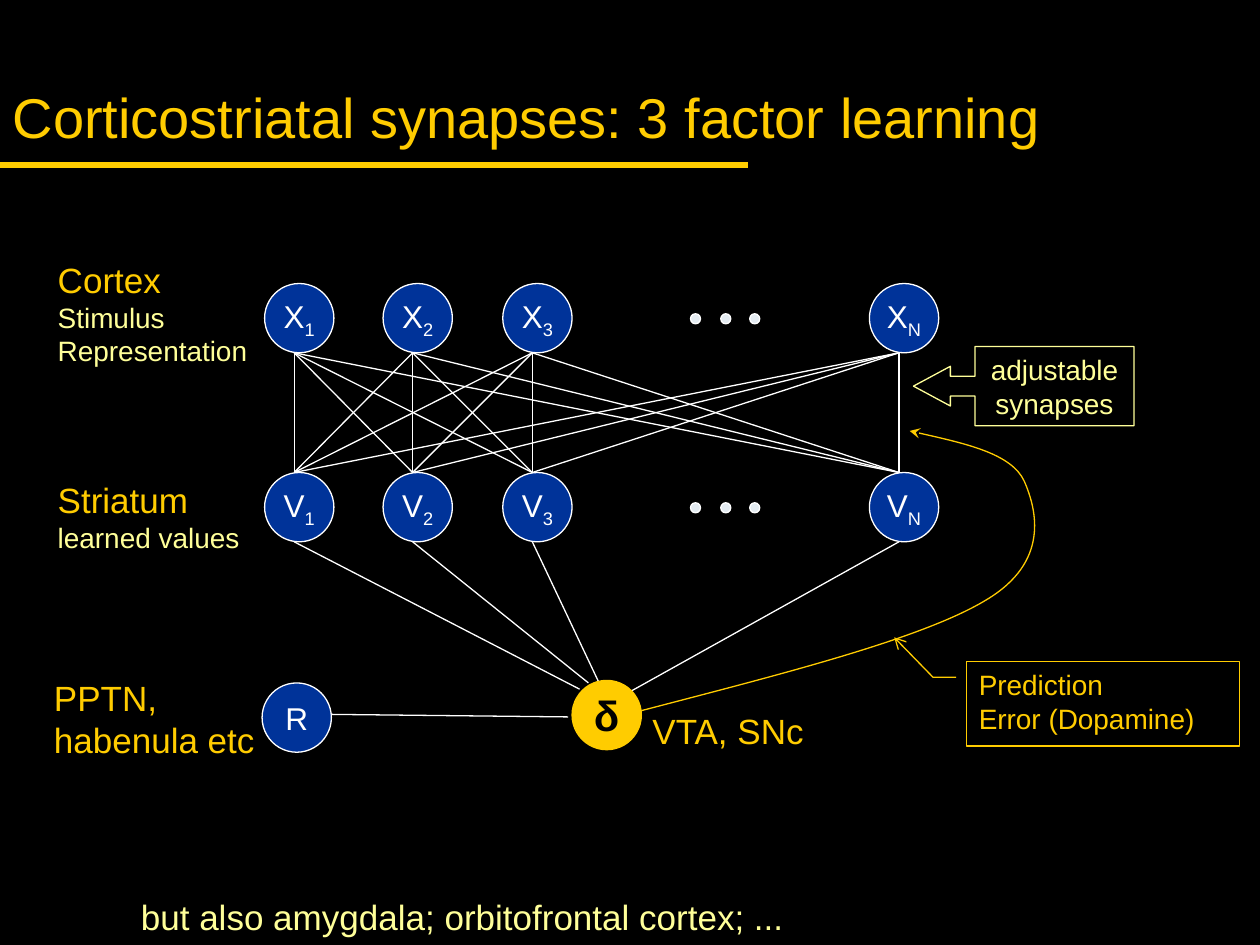
from itertools import product

from pptx import Presentation
from pptx import util as u
from pptx.dml.color import RGBColor
from pptx.enum import shapes, text
from pptx.oxml.ns import qn
from lxml import etree

COLORS = {
    "black": "000000",
    "gold": "FFCC00",
    "cream": "FFFF99",
    "white": "FFFFFF",
    "blue": "003399",
    "pale": "E3EBF1",
}
FONT = "Arial"
NODE = 0.55
DOT = 0.08
COLUMNS = {"1": 2.1, "2": 3.04, "3": 3.99, "N": 6.9}
CORTEX_TOP, STRIATUM_TOP = 2.25, 3.75
LINK_OFFSET = 0.235  # from a node's left edge to the foot of its links


def rgb(name):
    return RGBColor.from_string(COLORS[name])


def inches(*lengths):
    return [u.Inches(length) for length in lengths]


class Diagram:
    def __init__(self, slide):
        self.slide = slide

    def outline(self, item, color, width=0.75, tail=None):
        """Format a line; tail names the arrowhead at its end."""
        item.line.color.rgb = rgb(color)
        item.line.width = u.Pt(width)
        if tail:
            line = item.line._get_or_add_ln()
            etree.SubElement(line, qn("a:tailEnd"), type=tail)

    def set_text(self, shape, lines, align=None, anchor=None, wrap=True):
        """Fill a shape with (text, size, color) paragraphs."""
        frame = shape.text_frame
        frame.word_wrap = wrap
        frame.vertical_anchor = anchor or text.MSO_ANCHOR.TOP
        for index, (words, size, color) in enumerate(lines):
            paragraph = frame.add_paragraph() if index else frame.paragraphs[0]
            paragraph.text = words
            paragraph.alignment = align or text.PP_ALIGN.LEFT
            paragraph.font.size = u.Pt(size)
            paragraph.font.name = FONT
            paragraph.font.color.rgb = rgb(color)

    def title(self, words, box):
        title = self.slide.shapes.title
        title.left, title.top, title.width, title.height = inches(*box)
        self.set_text(title, [(words, 32, "gold")], anchor=text.MSO_ANCHOR.MIDDLE)

    def label(self, box, *lines, wrap=True):
        self.set_text(self.slide.shapes.add_textbox(*inches(*box)), lines, wrap=wrap)

    def shape(self, kind, box, line, fill=None, tail=None):
        shape = self.slide.shapes.add_shape(kind, *inches(*box))
        shape.shadow.inherit = False
        if fill:
            shape.fill.solid()
            shape.fill.fore_color.rgb = rgb(fill)
        else:
            shape.fill.background()
        self.outline(shape, line, tail=tail)
        return shape

    def node(self, left, top, letter, subscript="", size=18,
             fill="blue", line="white", color="white"):
        circle = self.shape(shapes.MSO_SHAPE.OVAL, (left, top, NODE, NODE), line, fill)
        self.set_text(circle, [(letter, size, color)], text.PP_ALIGN.CENTER,
                      text.MSO_ANCHOR.MIDDLE, wrap=False)
        paragraph = circle.text_frame.paragraphs[0]
        if subscript:
            run = paragraph.add_run()
            run.text = subscript
            run.font._element.set("baseline", "-25000")
        return paragraph

    def dots(self, top):
        for left in (5.48, 5.72, 5.95):
            self.shape(shapes.MSO_SHAPE.OVAL, (left, top, DOT, DOT), "white", "pale")

    def link(self, start, end, color="white", width=0.75):
        connector = self.slide.shapes.add_connector(
            shapes.MSO_CONNECTOR.STRAIGHT, *inches(*start, *end))
        self.outline(connector, color, width)
        etree.SubElement(connector._element.spPr, qn("a:effectLst"))

    def curve(self, points, color, tail):
        """Draw cubic Béziers: a start, then two controls and an end for each."""
        start, *others = [tuple(inches(*point)) for point in points]
        builder = self.slide.shapes.build_freeform(*start)
        builder.add_line_segments(others, close=False)
        shape = builder.convert_to_shape()
        segments = list(shape._element.iter(qn("a:lnTo")))
        for first in range(0, len(segments), 3):
            bezier = etree.SubElement(segments[first].getparent(), qn("a:cubicBezTo"))
            for segment in segments[first:first + 3]:
                bezier.append(segment[0])
                segment.getparent().remove(segment)
        shape.shadow.inherit = False
        shape.fill.background()
        self.outline(shape, color, tail=tail)

    def callout(self, kind, box, color, adjustments, lines, tail=None, **layout):
        shape = self.shape(kind, box, color, tail=tail)
        for index, value in enumerate(adjustments):
            shape.adjustments[index] = value
        self.set_text(shape, [(line, 16, color) for line in lines], **layout)
        return shape


def main():
    presentation = Presentation()
    presentation.slide_width, presentation.slide_height = inches(10, 7.5)
    slide = presentation.slides.add_slide(presentation.slide_layouts[5])
    slide.background.fill.solid()
    slide.background.fill.fore_color.rgb = rgb("black")
    diagram = Diagram(slide)

    diagram.link((0, 1.31), (5.94, 1.31), "gold", 3)
    diagram.title("Corticostriatal synapses: 3 factor learning", (0, 0.3, 9.96, 1.25))

    for letter, top in (("X", CORTEX_TOP), ("V", STRIATUM_TOP)):
        for subscript, left in COLUMNS.items():
            diagram.node(left, top, letter, subscript)
        diagram.dots(top + 0.24)

    feet = [left + LINK_OFFSET for left in COLUMNS.values()]
    for cortex, striatum in product(feet, repeat=2):
        diagram.link((cortex, CORTEX_TOP + NODE), (striatum, STRIATUM_TOP))
    delta_ends = [(4.6, 5.47), (4.67, 5.42), (4.75, 5.41), (5, 5.49)]
    for foot, end in zip(feet, delta_ends):
        diagram.link((foot, STRIATUM_TOP + NODE), end)
    diagram.link((2.63, 5.67), (4.51, 5.69))

    diagram.label((0.36, 2, 1.71, 0.97), ("Cortex", 20, "gold"),
                  ("Stimulus", 16, "cream"), ("Representation", 16, "cream"), wrap=False)
    diagram.label((0.36, 3.75, 1.81, 0.7), ("Striatum", 20, "gold"),
                  ("learned values", 16, "cream"))
    diagram.label((0.33, 5.32, 1.83, 0.77), ("PPTN, habenula etc", 20, "gold"))
    diagram.label((5.08, 5.58, 1.5, 0.43), ("VTA, SNc", 20, "gold"))
    diagram.label((1.02, 7.06, 7.34, 0.44),
                  ("but also amygdala; orbitofrontal cortex; ...", 20, "cream"))

    synapses = diagram.callout(
        shapes.MSO_SHAPE.RIGHT_ARROW_CALLOUT, (7.25, 2.75, 1.75, 0.63), "cream",
        (0.25, 0.25, 0.465, 0.721), ("adjustable", "synapses"),
        align=text.PP_ALIGN.CENTER, anchor=text.MSO_ANCHOR.MIDDLE, wrap=False)
    synapses._element.spPr.xfrm.set("flipH", "1")

    diagram.curve([(5.09, 5.64), (6.2, 5.35), (7.32, 5.07), (7.83, 4.76),
                   (8.33, 4.46), (8.23, 4.05), (8.13, 3.82),
                   (8.03, 3.6), (7.62, 3.51), (7.22, 3.42)], "gold", "stealth")
    diagram.callout(
        shapes.MSO_SHAPE.LINE_CALLOUT_2, (7.67, 5.25, 2.17, 0.67), "gold",
        (0.188, -0.038, 0.188, -0.122, -0.286, -0.264),
        ("Prediction", "Error (Dopamine)"), tail="arrow")

    delta = diagram.node(4.54, 5.4, "δ", size=24, fill="gold", line="gold", color="black")
    delta.font.bold = True
    diagram.node(2.08, 5.42, "R")

    presentation.save("out.pptx")


if __name__ == "__main__":
    main()
